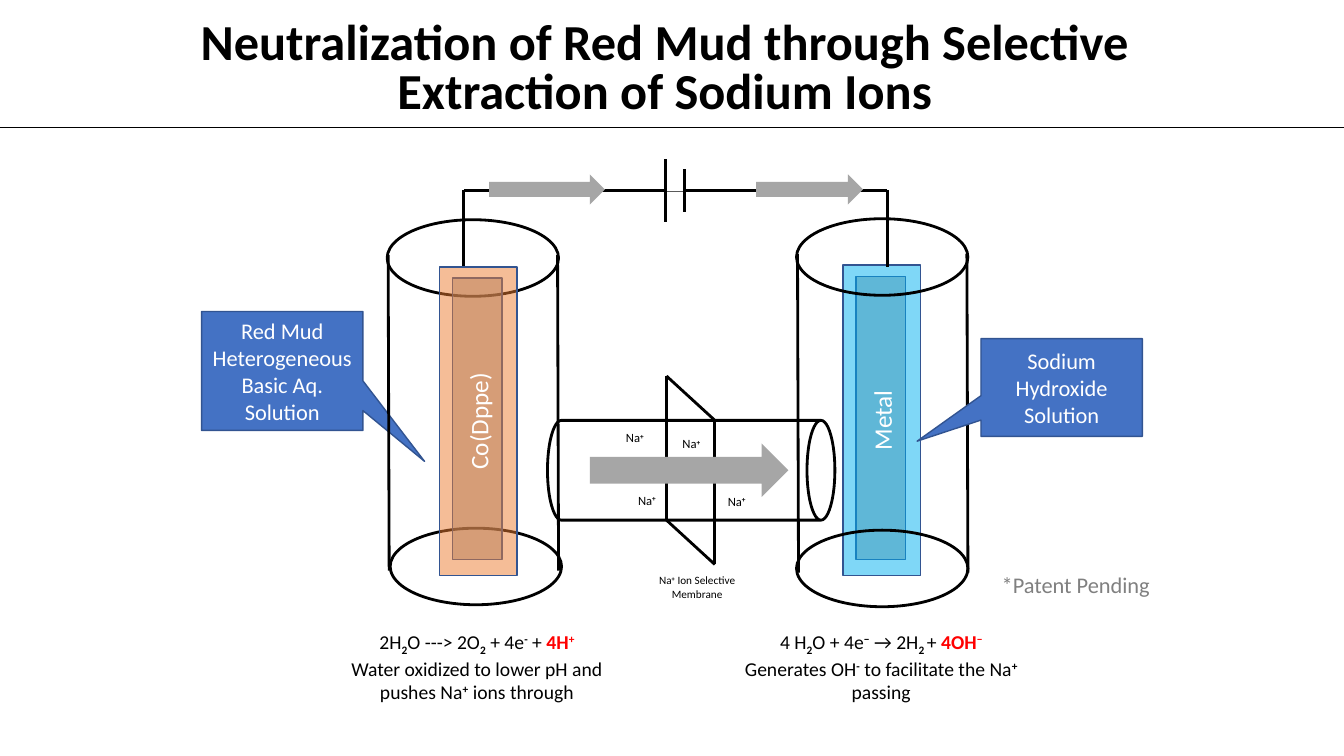
import pptx
import pptx.dml.color
import pptx.enum.shapes
import pptx.enum.text
import pptx.oxml.ns
import pptx.util
import lxml.etree

Inches = pptx.util.Inches
Pt = pptx.util.Pt
SHAPES = pptx.enum.shapes.MSO_SHAPE
ALIGN = pptx.enum.text.PP_ALIGN
ANCHOR = pptx.enum.text.MSO_ANCHOR
BLACK, WHITE, RED = "000000", "FFFFFF", "FF0000"
GREY, ARROW_GREY, BLUE, EDGE = "808080", "A6A6A6", "4472C4", "325491"
SUB, SUP = -25, 30
SODIUM_ION = [("Na",), ("+", SUP)]


def rgb(value):
    """Turn a hex string into a colour."""
    return pptx.dml.color.RGBColor.from_string(value)


def write(frame, paragraphs, size, color, align=ALIGN.CENTER, bold=False):
    """Write paragraphs of (text, baseline, accent colour) runs."""
    for index, parts in enumerate(paragraphs):
        paragraph = frame.add_paragraph() if index else frame.paragraphs[0]
        paragraph.alignment = align
        for text, baseline, accent in ((*part, 0, None)[:3] if len(part) < 3 else part
                                       for part in parts):
            run = paragraph.add_run()
            run.text = text
            run.font.name = "Calibri"
            run.font.size = Pt(size)
            run.font.bold = bold or accent is not None
            run.font.color.rgb = rgb(accent or color)
            if baseline:
                run._r.get_or_add_rPr().set("baseline", str(baseline * 1000))


def add_text(slide, box, paragraphs, size, color=BLACK, wrap=True, **style):
    """Place a text box."""
    frame = slide.shapes.add_textbox(*map(Inches, box)).text_frame
    frame.word_wrap = wrap
    write(frame, paragraphs, size, color, **style)
    return frame


def add_shape(slide, kind, box, fill=None, edge=None, width=1, alpha=None):
    """Place a preset shape with plain fill and outline."""
    shape = slide.shapes.add_shape(kind, *map(Inches, box))
    shape.shadow.inherit = False
    if fill:
        shape.fill.solid()
        shape.fill.fore_color.rgb = rgb(fill)
    else:
        shape.fill.background()
    if alpha:
        tint = shape.fill._xPr.find(".//" + pptx.oxml.ns.qn("a:srgbClr"))
        lxml.etree.SubElement(tint, pptx.oxml.ns.qn("a:alpha"), val=str(alpha * 1000))
    if edge:
        shape.line.color.rgb = rgb(edge)
        shape.line.width = Pt(width)
    else:
        shape.line.fill.background()
    return shape


def add_line(slide, x1, y1, x2, y2, width=2):
    """Draw a straight black line."""
    line = slide.shapes.add_connector(
        pptx.enum.shapes.MSO_CONNECTOR.STRAIGHT, *map(Inches, (x1, y1, x2, y2)))
    line.line.color.rgb = rgb(BLACK)
    line.line.width = Pt(width)
    lxml.etree.SubElement(line._element.spPr, pptx.oxml.ns.qn("a:effectLst"))


def add_heading(slide, left, top, width, height):
    """Write the title and the rule beneath it."""
    title = "Neutralization of Red Mud through Selective Extraction of Sodium Ions"
    frame = add_text(slide, (left, top, width, height), [[(title,)]], 36, bold=True)
    frame.vertical_anchor = ANCHOR.MIDDLE
    frame.paragraphs[0].line_spacing = Pt(35)
    add_line(slide, 0, 1.26, 13.33, 1.26, 0.5)


def add_callout(slide, box, tip, label):
    """Place a blue callout whose tip is relative to its box."""
    callout = add_shape(slide, SHAPES.RECTANGULAR_CALLOUT, box, BLUE, EDGE)
    callout.adjustments[0], callout.adjustments[1] = tip
    callout.text_frame.word_wrap = True
    callout.text_frame.vertical_anchor = ANCHOR.MIDDLE
    write(callout.text_frame, [[(label,)]], 16, WHITE)


def add_electrode(slide, left, top, height, color, label):
    """Place a grey core under a translucent plate with an upright label."""
    core = (left + 0.13, top + 0.11, 0.49, height - 0.27)
    add_shape(slide, SHAPES.RECTANGLE, core, GREY, EDGE, alpha=50)
    plate = add_shape(slide, SHAPES.RECTANGLE, (left, top, 0.77, height), color, EDGE, alpha=50)
    frame = plate.text_frame
    frame._txBody.bodyPr.set("vert", "vert270")
    frame.word_wrap = True
    frame.vertical_anchor = ANCHOR.MIDDLE
    write(frame, [[(label,)]], 18, WHITE)


def add_vessel(slide, left, top, height, lean=0):
    """Draw an open cylinder whose base is shifted by lean."""
    width, rim = 1.7, 0.76
    for x, y in ((left, top), (left + lean, top + height - rim)):
        add_shape(slide, SHAPES.OVAL, (x, y, width, rim), edge=BLACK, width=2)
    for x in (left + 0.01, left + width - 0.01):
        add_line(slide, x, top + 0.35, x + 0.01, top + height - 0.34)


def add_bridge(slide, left, top, width, height):
    """Draw the tube with its membrane, ions and flow arrow."""
    right, bottom = left + width, top + height
    upright = ((left + right - height) / 2, (top + bottom - width) / 2, height, width)
    tube = add_shape(slide, SHAPES.CAN, upright, edge=BLACK, width=2)
    tube.adjustments[0] = 0.279
    tube.rotation = 90
    near, far, drop = left + 1.18, left + 1.66, 0.44
    add_line(slide, near, top - drop, near, bottom)
    add_line(slide, far, top, far, bottom + drop)
    for y in (top - drop, bottom):
        add_line(slide, near, y, far, y + drop)
    add_shape(slide, SHAPES.RIGHT_ARROW, (left + 0.42, top + 0.23, 1.97, 0.53), ARROW_GREY)
    for x, y in ((0.68, 0.05), (0.8, 0.67), (1.24, 0.11), (1.69, 0.68)):
        add_text(slide, (left + x, top + y, 0.41, 0.27), [SODIUM_ION], 9,
                 wrap=False, align=ALIGN.LEFT)
    add_text(slide, (left + 0.95, bottom + 0.48, 1.07, 0.4),
             [[*SODIUM_ION, (" Ion Selective Membrane",)]], 8)


def add_circuit(slide, left, top, width, drop):
    """Draw the wires, the battery and the current arrows."""
    right = left + width
    add_line(slide, left, top, right, top)
    for x in (left, right):
        add_line(slide, x, top, x, top + drop)
    add_shape(slide, SHAPES.RECTANGLE, (left + 2, top - 0.02, 0.19, 0.03), WHITE)
    for x, half in ((left + 2, 0.31), (left + 2.19, 0.21)):
        add_line(slide, x, top - half, x, top + half)
    for x, length in ((left + 0.25, 1.15), (left + 2.9, 1.06)):
        add_shape(slide, SHAPES.RIGHT_ARROW, (x, top - 0.16, length, 0.3), ARROW_GREY)


def add_reactions(slide, top, width, height):
    """Write the half reactions below the two vessels."""
    oxidation = [
        [("2H",), ("2", SUB), ("O ---> 2O",), ("2", SUB), (" + 4e",), ("-", SUP), (" + ",),
         ("4H", 0, RED), ("+", SUP, RED)],
        [("Water oxidized to lower pH and pushes Na",), ("+", SUP), (" ions through",)],
    ]
    reduction = [
        [("4 H",), ("2", SUB), ("O + 4e",), ("−", SUP), (" → 2H",), ("2 ", SUB), ("+ ",),
         ("4OH", 0, RED), ("−", SUP, RED)],
        [("Generates OH",), ("-", SUP), (" to facilitate the Na",), ("+", SUP), (" passing",)],
    ]
    for left, reaction in ((3.12, oxidation), (7.13, reduction)):
        add_text(slide, (left, top, width, height), reaction, 14)


def main():
    """Build the slide and save it."""
    deck = pptx.Presentation()
    deck.slide_width, deck.slide_height = Inches(13.33), Inches(7.5)
    slide = deck.slides.add_slide(deck.slide_layouts[6])
    add_heading(slide, 1.83, 0.15, 9.53, 1.09)
    add_callout(slide, (2, 3.09, 1.6, 1.18), (0.882, 0.76),
                "Red Mud Heterogeneous Basic Aq. Solution")
    add_electrode(slide, 8.36, 2.63, 3.08, "00B0F0", "Metal")
    add_vessel(slide, 7.9, 2.17, 3.85)
    add_vessel(slide, 3.84, 2.18, 3.82, lean=0.03)
    add_bridge(slide, 5.43, 4.17, 2.85, 0.99)
    add_circuit(slide, 4.6, 1.89, 4.2, 0.76)
    add_electrode(slide, 4.36, 2.65, 3.06, "ED7D31", "Co(Dppe)")
    add_callout(slide, (9.73, 3.36, 1.6, 0.97), (-0.896, 0.549), "Sodium Hydroxide Solution")
    add_reactions(slide, 6.2, 3.22, 0.81)
    add_text(slide, (9.6, 5.62, 2.14, 0.37), [[("*Patent Pending",)]], 16, GREY)
    deck.save("out.pptx")


if __name__ == "__main__":
    main()
